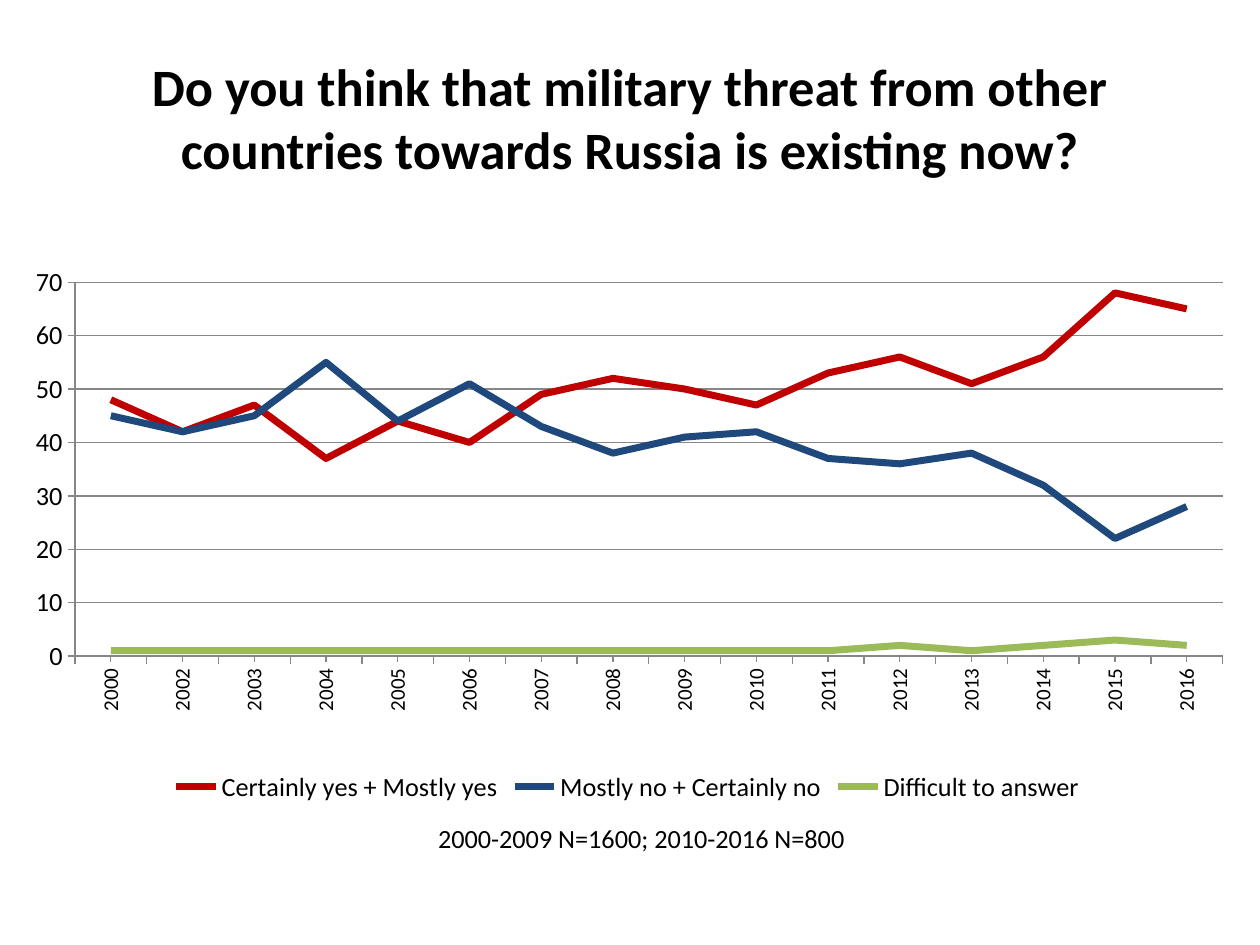
from lxml.etree import SubElement
from pptx import Presentation
from pptx.chart.data import CategoryChartData
from pptx.dml.color import RGBColor
from pptx.enum.chart import XL_CHART_TYPE, XL_LEGEND_POSITION, XL_TICK_MARK
from pptx.enum.text import MSO_ANCHOR, MSO_AUTO_SIZE, PP_ALIGN
from pptx.oxml.ns import qn
from pptx.util import Pt

PX = 914400 / 126
FONT = "Calibri"
COLORS = {"text": "000000", "axis": "878787",
          "yes": "C00000", "no": "1F497D", "unsure": "9BBB59"}
YEARS = ["2000"] + [str(year) for year in range(2002, 2017)]
SERIES = [
    ("Certainly yes + Mostly yes", "yes",
     (48, 42, 47, 37, 44, 40, 49, 52, 50, 47, 53, 56, 51, 56, 68, 65)),
    ("Mostly no + Certainly no", "no",
     (45, 42, 45, 55, 44, 51, 43, 38, 41, 42, 37, 36, 38, 32, 22, 28)),
    ("Difficult to answer ", "unsure",
     (1, 1, 1, 1, 1, 1, 1, 1, 1, 1, 1, 2, 1, 2, 3, 2)),
]
PLOT = {"x": 0.045, "y": 0.03, "w": 0.94, "h": 0.69}


def emu(box):
    """Turn a box in px into EMU."""
    return [round(v * PX) for v in box]


def rgb(name):
    """Look up a named colour."""
    return RGBColor.from_string(COLORS[name])


def style_font(font, size, bold=False):
    """Apply the slide's typeface at the given size."""
    font.name, font.size, font.bold = FONT, Pt(size), bold
    font.color.rgb = rgb("text")


def write(tf, text, size, bold=False):
    """Write one centred paragraph into a text frame."""
    p = tf.paragraphs[0]
    p.alignment = PP_ALIGN.CENTER
    r = p.add_run()
    r.text = text
    style_font(r.font, size, bold)


def add_title(s, box, text):
    """Place and fill the title placeholder."""
    sp = s.shapes.title
    sp.left, sp.top, sp.width, sp.height = emu(box)
    sp.text_frame.vertical_anchor = MSO_ANCHOR.MIDDLE
    write(sp.text_frame, text, 30, True)


def set_plot_layout(chart):
    """Fix the inner plot area as fractions of the chart."""
    area = chart.element.find(".//" + qn("c:plotArea"))
    layout = area.find(qn("c:layout"))
    if layout is None:
        layout = SubElement(area, qn("c:layout"))
        area.insert(0, layout)
    manual = SubElement(layout, qn("c:manualLayout"))
    settings = {"layoutTarget": "inner", "xMode": "edge", "yMode": "edge", **PLOT}
    for tag, val in settings.items():
        SubElement(manual, qn(f"c:{tag}")).set("val", str(val))


def style_axes(chart):
    """Format both axes and turn the year labels upright."""
    cat, val = chart.category_axis, chart.value_axis
    for axis, size in ((cat, 12), (val, 15)):
        style_font(axis.tick_labels.font, size)
        axis.format.line.color.rgb = rgb("axis")
        axis.format.line.width = Pt(0.75)
        axis.major_tick_mark = XL_TICK_MARK.OUTSIDE
    cat.minor_tick_mark = XL_TICK_MARK.OUTSIDE
    body = cat.tick_labels.font._element.getparent().getparent().getparent().find(qn("a:bodyPr"))
    body.set("rot", "-5400000")
    body.set("vert", "horz")
    val.minimum_scale, val.maximum_scale, val.major_unit = 0, 70, 10
    val.has_major_gridlines = True
    val.major_gridlines.format.line.color.rgb = rgb("axis")
    val.major_gridlines.format.line.width = Pt(0.75)


def add_line_chart(s, box):
    """Add the opinion trend chart."""
    data = CategoryChartData()
    data.categories = YEARS
    for name, _, values in SERIES:
        data.add_series(name, values)
    chart = s.shapes.add_chart(XL_CHART_TYPE.LINE, *emu(box), data).chart
    chart.has_title = False
    style_font(chart.font, 10)
    chart.plots[0].vary_by_categories = False
    for series, (_, color, _) in zip(chart.plots[0].series, SERIES):
        series.smooth = False
        series.format.line.color.rgb = rgb(color)
        series.format.line.width = Pt(4)
    style_axes(chart)
    set_plot_layout(chart)
    chart.has_legend = True
    chart.legend.position = XL_LEGEND_POSITION.BOTTOM
    chart.legend.include_in_layout = False
    style_font(chart.legend.font, 15)


def add_note(s, box, text):
    """Add the sample size line."""
    tf = s.shapes.add_textbox(*emu(box)).text_frame
    tf.word_wrap = False
    tf.auto_size = MSO_AUTO_SIZE.SHAPE_TO_FIT_TEXT
    write(tf, text, 15)


def main():
    """Build and save the slide."""
    prs = Presentation()
    prs.slide_width, prs.slide_height = emu((1260, 945))
    s = prs.slides.add_slide(prs.slide_layouts[5])
    add_title(s, (63, 38, 1134, 158),
              "Do you think that military threat from other countries "
              "towards Russia is existing now?")
    add_line_chart(s, (20, 266, 1221, 542))
    add_note(s, (423, 816, 437, 44), "2000-2009 N=1600; 2010-2016 N=800")
    prs.save("out.pptx")


if __name__ == "__main__":
    main()
